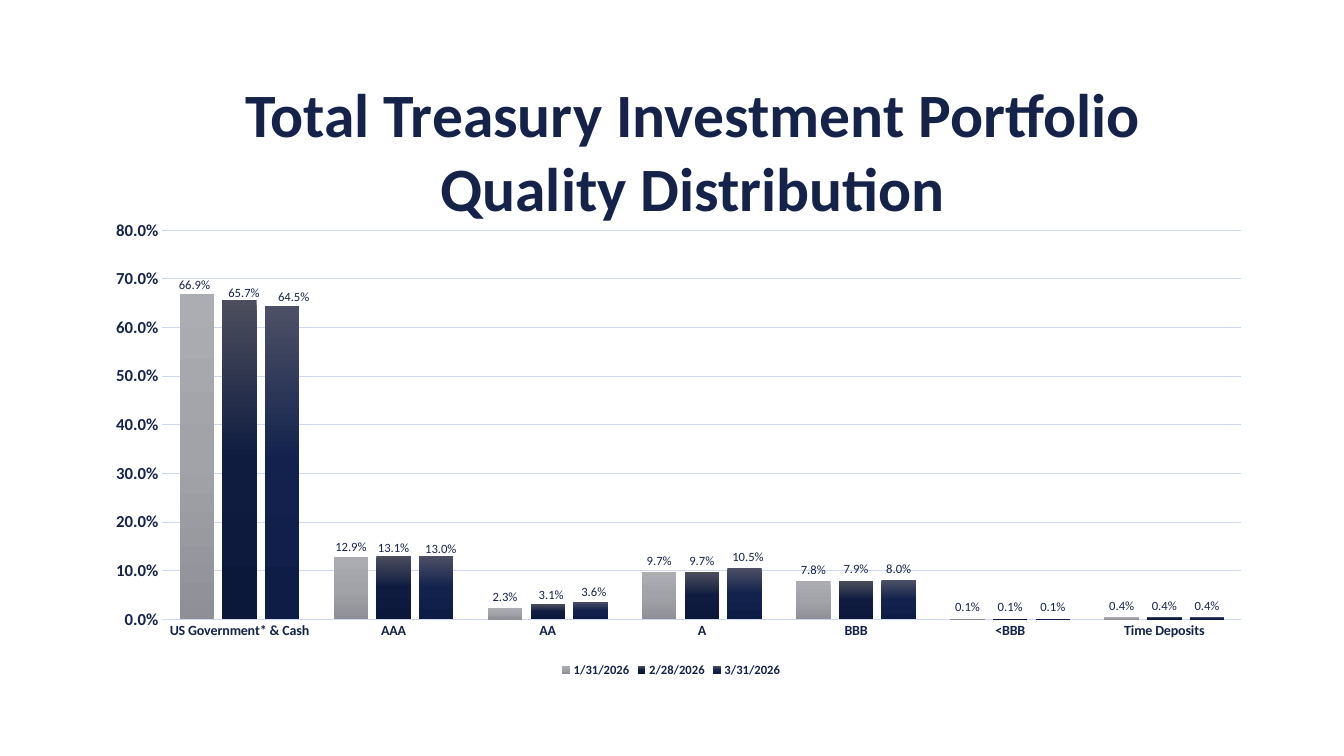
from dataclasses import dataclass

from pptx import Presentation
from pptx.chart.data import CategoryChartData
from pptx.dml.color import RGBColor
from pptx.enum.chart import (XL_CHART_TYPE, XL_LABEL_POSITION,
                             XL_LEGEND_POSITION, XL_TICK_MARK)
from pptx.enum.text import PP_ALIGN
from pptx.oxml import parse_xml
from pptx.oxml.ns import nsdecls
from pptx.util import Cm, Pt


@dataclass(frozen=True)
class Theme:
    """Colours, typeface and type sizes of the slide."""
    face: str = "Calibri"
    title: str = "152249"
    ink: str = "15234A"
    grid: str = "CFD8F1"
    head: int = 44
    scale: int = 12
    group: int = 10
    small: int = 9


THEME = Theme()
GROUPS = ["US Government* & Cash", "AAA", "AA", "A", "BBB", "<BBB", "Time Deposits"]
SERIES = {
    "1/31/2026": [0.669, 0.129, 0.023, 0.097, 0.078, 0.001, 0.004],
    "2/28/2026": [0.657, 0.131, 0.031, 0.097, 0.079, 0.001, 0.004],
    "3/31/2026": [0.645, 0.13, 0.036, 0.105, 0.08, 0.001, 0.004],
}
FILLS = [("ACADB3", "A2A3A9", "8F9097"),
         ("4C4E5D", "0F1C40", "0C183A"),
         ("4D5065", "12224D", "0E1D46")]
SHIFTS = [{0: (-0.002, 0.006), 1: (0, 0.004)},
          {0: (0.004, 0.01), 1: (0, 0.008), 2: (0.003, 0.004)},
          {0: (0.01, 0.006), 1: (0.004, 0.01), 2: (0.003, 0.004), 3: (0.003, 0)}]
FORMAT = "0.0%"


def style(font, size, color=THEME.ink, bold=True):
    """Set the face, size, colour and weight of a font."""
    font.name, font.size, font.bold = THEME.face, Pt(size), bold
    font.color.rgb = RGBColor.from_string(color)


def write(slide, text, box, size, color, align):
    """Add a wrapped text box with one paragraph."""
    frame = slide.shapes.add_textbox(*map(Cm, box)).text_frame
    frame.word_wrap = True
    para = frame.paragraphs[0]
    para.text, para.alignment = text, align
    for run in para.runs:
        style(run.font, size, color)


def layout(x, y, size="", modes=""):
    """Build a manual layout element."""
    return parse_xml(f'<c:layout {nsdecls("c")}><c:manualLayout>{modes}'
                     f'<c:x val="{x}"/><c:y val="{y}"/>{size}'
                     '</c:manualLayout></c:layout>')


def shade(bar, colors):
    """Fill bars with an even gradient from top to bottom."""
    stops = "".join(f'<a:gs pos="{i * 50000}"><a:srgbClr val="{c}"/></a:gs>'
                    for i, c in enumerate(colors))
    bar.format.fill.gradient()
    old = bar.format._element.find(".//{*}gradFill") if hasattr(bar.format, "_element") \
        else bar._element.find("./{*}spPr/{*}gradFill")
    new = parse_xml(f'<a:gradFill {nsdecls("a")} rotWithShape="1"><a:gsLst>{stops}</a:gsLst>'
                    '<a:lin ang="5400000" scaled="0"/></a:gradFill>')
    old.getparent().replace(old, new)


def label(bar, shifts):
    """Show values above the bars and nudge the crowded ones."""
    marks = bar.data_labels
    marks.show_value = True
    marks.number_format, marks.number_format_is_linked = FORMAT, False
    marks.position = XL_LABEL_POSITION.OUTSIDE_END
    style(marks.font, THEME.small, bold=False)
    for spot, (x, y) in shifts.items():
        mark = bar.points[spot].data_label
        style(mark.font, THEME.small, bold=False)
        mark.position = XL_LABEL_POSITION.OUTSIDE_END
        index = bar._element.xpath(f'c:dLbls/c:dLbl/c:idx[@val="{spot}"]')[0]
        index.addnext(layout(x, y))


def scale(axis, size):
    """Style an axis and hide its tick marks."""
    axis.major_tick_mark = axis.minor_tick_mark = XL_TICK_MARK.NONE
    axis.tick_labels.number_format = FORMAT
    axis.tick_labels.number_format_is_linked = False
    style(axis.tick_labels.font, size)


def rule(line, width):
    """Colour a grid or axis line."""
    line.color.rgb = RGBColor.from_string(THEME.grid)
    line.width = Pt(width)


def columns(slide, box):
    """Add the clustered column chart."""
    data = CategoryChartData(number_format=FORMAT)
    data.categories = GROUPS
    for name, values in SERIES.items():
        data.add_series(name, values)
    chart = slide.shapes.add_chart(XL_CHART_TYPE.COLUMN_CLUSTERED,
                                   *map(Cm, box), data).chart
    chart.has_title = False
    style(chart.font, THEME.scale)
    plot = chart.plots[0]
    plot.gap_width, plot.overlap, plot.vary_by_categories = 100, -24, False
    for bar, colors, shifts in zip(plot.series, FILLS, SHIFTS):
        shade(bar, colors)
        label(bar, shifts)
    base, side = chart.category_axis, chart.value_axis
    scale(base, THEME.group)
    rule(base.format.line, 1)
    scale(side, THEME.scale)
    side.minimum_scale, side.maximum_scale, side.major_unit = 0, 0.8, 0.1
    side.format.line.fill.background()
    rule(side.major_gridlines.format.line, 0.75)
    chart.has_legend = True
    chart.legend.position = XL_LEGEND_POSITION.BOTTOM
    chart.legend.include_in_layout = False
    style(chart.legend.font, THEME.small)
    area = chart._chartSpace.xpath("c:chart/c:plotArea")[0]
    for old in area.xpath("c:layout"):
        area.remove(old)
    area.insert(0, layout(0.061, 0.04, '<c:w val="0.931"/><c:h val="0.828"/>',
                          '<c:layoutTarget val="inner"/><c:xMode val="edge"/>'
                          '<c:yMode val="edge"/>'))


def main():
    """Build and save the slide."""
    deck = Presentation()
    deck.slide_width, deck.slide_height = Cm(33.87), Cm(19.05)
    slide = deck.slides.add_slide(deck.slide_layouts[6])
    write(slide, "Total Treasury Investment Portfolio\vQuality Distribution",
          (3.61, 1.8, 27.71, 4.01), size=THEME.head, color=THEME.title,
          align=PP_ALIGN.CENTER)
    columns(slide, (2.31, 5.33, 29.21, 11.84))
    deck.save("out.pptx")


if __name__ == "__main__":
    main()
